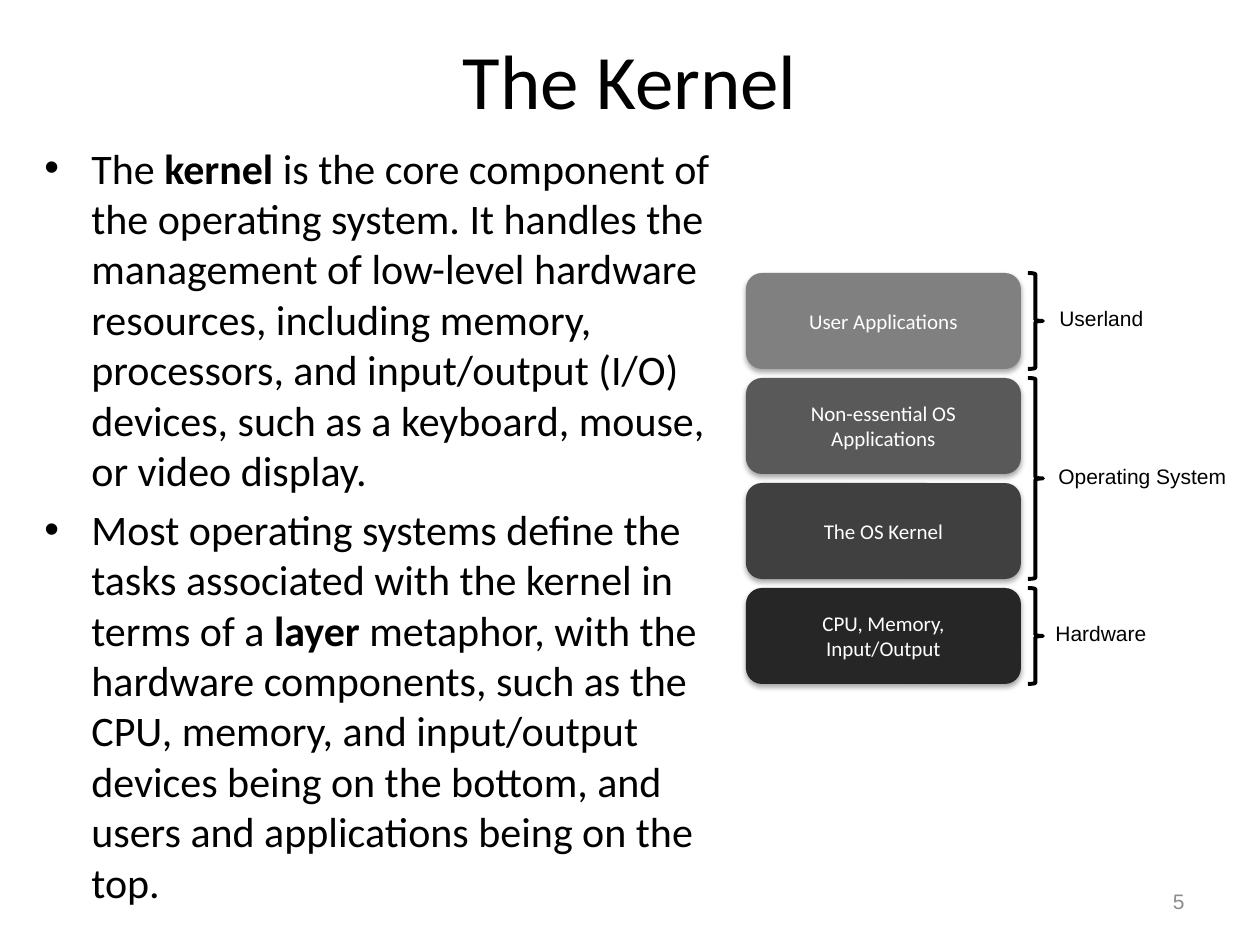
import lxml.etree
import pptx
import pptx.dml.color
import pptx.enum.shapes
import pptx.enum.text
import pptx.oxml
import pptx.oxml.ns
import pptx.util

RGBColor = pptx.dml.color.RGBColor
Shape = pptx.enum.shapes.MSO_SHAPE
Align = pptx.enum.text.PP_ALIGN
Anchor = pptx.enum.text.MSO_ANCHOR

BLACK = RGBColor(0x00, 0x00, 0x00)
WHITE = RGBColor(0xFF, 0xFF, 0xFF)
NUMBER_GREY = RGBColor(0x8C, 0x8C, 0x8C)

LAYERS = [
    ("User Applications", RGBColor(0x80, 0x80, 0x80)),
    ("Non-essential OS Applications", RGBColor(0x59, 0x59, 0x59)),
    ("The OS Kernel", RGBColor(0x40, 0x40, 0x40)),
    ("CPU, Memory, Input/Output", RGBColor(0x26, 0x26, 0x26)),
]
# label, first layer, layers spanned, label left, label width
GROUPS = [
    ("Userland", 0, 1, 1047, 111),
    ("Operating System", 1, 2, 1046, 204),
    ("Hardware", 3, 1, 1043, 118),
]
# each bullet is a list of (text, bold) runs
BULLETS = [
    [
        ("The ", False),
        ("kernel ", True),
        ("is the core component of the operating system. It handles the "
         "management of low-level hardware resources, including memory, "
         "processors, and input/output (I/O) devices, such as a keyboard, "
         "mouse, or video display.", False),
    ],
    [
        ("Most operating systems define the tasks associated with the kernel "
         "in terms of a ", False),
        ("layer ", True),
        ("metaphor, with the hardware components, such as the CPU, memory, "
         "and input/output devices being on the bottom, and users and "
         "applications being on the top.", False),
    ],
]

LAYER_LEFT, LAYER_TOP, LAYER_WIDTH, LAYER_HEIGHT = 746, 273, 275, 96
LAYER_PITCH = 105
BRACE_LEFT, BRACE_WIDTH = 1028, 15
LABEL_HEIGHT = 43


def px(length):
    """Turn pixels, 126 to the inch, into EMU."""
    return pptx.util.Emu(round(length * 914400 / 126))


class SlideBuilder:
    """Holds the fonts and the slide being filled."""

    heading_font = "Calibri"
    label_font = "Arial"
    small = 12

    def __init__(self, slide):
        self.slide = slide

    def add_run(self, para, text, size, font, color, bold=False):
        run = para.add_run()
        run.text = text
        run.font.size = pptx.util.Pt(size)
        run.font.name = font
        run.font.color.rgb = color
        run.font.bold = bold

    def title(self, text, left, top, width, height):
        box = self.slide.shapes.title
        box.left, box.top = px(left), px(top)
        box.width, box.height = px(width), px(height)
        box.text_frame.vertical_anchor = Anchor.MIDDLE
        para = box.text_frame.paragraphs[0]
        para.alignment = Align.CENTER
        self.add_run(para, text, 44, self.heading_font, BLACK)

    def text_box(self, left, top, width, height, wrap=True):
        box = self.slide.shapes.add_textbox(px(left), px(top), px(width), px(height))
        box.text_frame.word_wrap = wrap
        return box.text_frame

    def bullets(self, items, left, top, width, height):
        frame = self.text_box(left, top, width, height)
        for index, runs in enumerate(items):
            para = frame.add_paragraph() if index else frame.paragraphs[0]
            para.space_before = pptx.util.Pt(4.8)
            properties = para._p.get_or_add_pPr()
            properties.set("marL", str(px(47)))
            properties.set("indent", str(px(-47)))
            for tag, key, value in (("a:buFont", "typeface", "Arial"),
                                    ("a:buChar", "char", "•")):
                bullet = lxml.etree.SubElement(properties, pptx.oxml.ns.qn(tag))
                bullet.set(key, value)
            for text, bold in runs:
                self.add_run(para, text, 24, self.heading_font, BLACK, bold)

    def label(self, text, left, top, width, height):
        frame = self.text_box(left, top, width, height, wrap=False)
        frame.auto_size = pptx.enum.text.MSO_AUTO_SIZE.SHAPE_TO_FIT_TEXT
        self.add_run(frame.paragraphs[0], text, self.small, self.label_font, BLACK)

    def page_number(self, text, left, top, width, height):
        frame = self.text_box(left, top, width, height)
        frame.vertical_anchor = Anchor.MIDDLE
        para = frame.paragraphs[0]
        para.alignment = Align.RIGHT
        self.add_run(para, text, self.small, self.label_font, NUMBER_GREY)

    def layer(self, text, color, left, top, width, height):
        box = self.slide.shapes.add_shape(
            Shape.ROUNDED_RECTANGLE, px(left), px(top), px(width), px(height))
        box.fill.solid()
        box.fill.fore_color.rgb = color
        box.line.fill.background()
        self.soft_shadow(box)
        frame = box.text_frame
        frame.word_wrap = True
        frame.vertical_anchor = Anchor.MIDDLE
        para = frame.paragraphs[0]
        para.alignment = Align.CENTER
        self.add_run(para, text, self.small, self.heading_font, WHITE)

    def soft_shadow(self, box):
        """Give the shape a blurred shadow straight below it."""
        box.shadow.inherit = False
        effects = box._element.spPr.find(pptx.oxml.ns.qn("a:effectLst"))
        effects.append(pptx.oxml.parse_xml(
            f'<a:outerShdw {pptx.oxml.ns.nsdecls("a")} blurRad="{pptx.util.Pt(3.1)}" '
            f'dist="{pptx.util.Pt(1.8)}" dir="5400000" rotWithShape="0">'
            '<a:srgbClr val="000000"><a:alpha val="35000"/></a:srgbClr>'
            '</a:outerShdw>'))

    def brace(self, left, top, width, height):
        brace = self.slide.shapes.add_shape(
            Shape.RIGHT_BRACE, px(left), px(top), px(width), px(height))
        brace.shadow.inherit = False
        brace.fill.background()
        brace.line.color.rgb = BLACK
        brace.line.width = pptx.util.Pt(2.25)


def main():
    deck = pptx.Presentation()
    deck.slide_width, deck.slide_height = px(1260), px(945)
    page = SlideBuilder(deck.slides.add_slide(deck.slide_layouts[5]))

    page.title("The Kernel", 63, 0, 1134, 158)
    page.bullets(BULLETS, 32, 136, 714, 766)
    page.page_number("5", 903, 876, 294, 50)

    for level, (text, color) in enumerate(LAYERS):
        page.layer(text, color, LAYER_LEFT, LAYER_TOP + level * LAYER_PITCH,
                   LAYER_WIDTH, LAYER_HEIGHT)

    for text, first, count, left, width in GROUPS:
        top = LAYER_TOP + first * LAYER_PITCH
        height = (count - 1) * LAYER_PITCH + LAYER_HEIGHT
        page.brace(BRACE_LEFT, top, BRACE_WIDTH, height)
        page.label(text, left, top + (height - LABEL_HEIGHT) // 2, width, LABEL_HEIGHT)

    deck.save("out.pptx")


if __name__ == "__main__":
    main()
